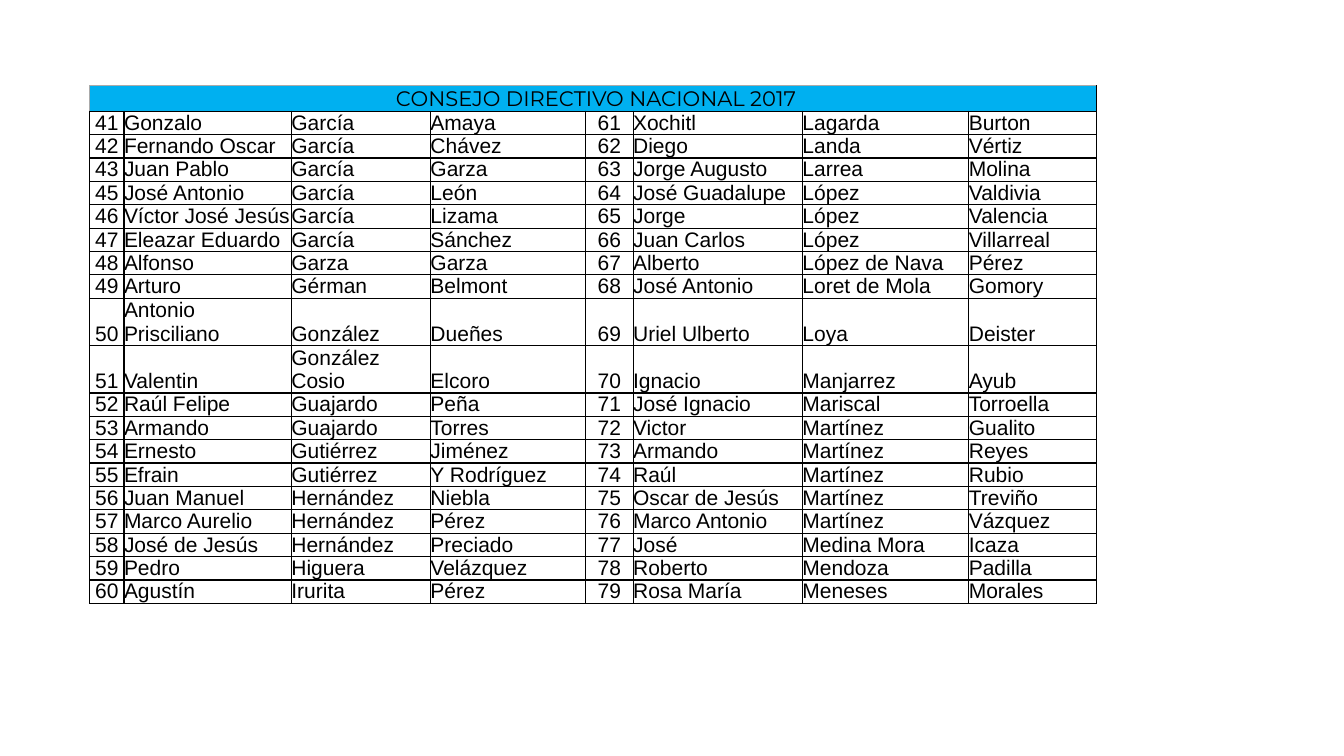
import pptx
import pptx.util
import pptx.dml.color
import pptx.enum.text
import lxml.etree

PX = 9144
COLORS = {"heading": "00B0F0", "cell": "FFFFFF", "text": "000000", "line": "000000", "edge": "AAAAAA"}
ALIGN = pptx.enum.text.PP_ALIGN
ANCHOR = pptx.enum.text.MSO_ANCHOR
DRAWING = "http://schemas.openxmlformats.org/drawingml/2006/main"

TITLE = " CONSEJO DIRECTIVO NACIONAL 2017"
COLUMN_WIDTHS = [34, 166, 138, 154, 47, 168, 165, 127]
NUMBER_COLUMNS = (0, 4)
LINE_HEIGHT = 23
TALL_HEIGHT = 47
TALL_ROWS = (9, 10)
MEMBERS = [
    ("41", "Gonzalo", "García", "Amaya", "61", "Xochitl", "Lagarda", "Burton"),
    ("42", "Fernando Oscar", "García", "Chávez", "62", "Diego", "Landa", "Vértiz"),
    ("43", "Juan Pablo", "García", "Garza", "63", "Jorge Augusto", "Larrea", "Molina"),
    ("45", "José Antonio", "García", "León", "64", "José Guadalupe", "López", "Valdivia"),
    ("46", "Víctor José Jesús", "García", "Lizama", "65", "Jorge", "López", "Valencia"),
    ("47", "Eleazar Eduardo", "García", "Sánchez", "66", "Juan Carlos", "López", "Villarreal"),
    ("48", "Alfonso", "Garza", "Garza", "67", "Alberto", "López de Nava", "Pérez"),
    ("49", "Arturo", "Gérman", "Belmont", "68", "José Antonio", "Loret de Mola", "Gomory"),
    ("50", "Antonio Prisciliano", "González", "Dueñes", "69", "Uriel Ulberto", "Loya", "Deister"),
    ("51", "Valentin", "González Cosio", "Elcoro", "70", "Ignacio", "Manjarrez", "Ayub"),
    ("52", "Raúl Felipe", "Guajardo", "Peña", "71", "José Ignacio", "Mariscal", "Torroella"),
    ("53", "Armando", "Guajardo", "Torres", "72", "Victor", "Martínez", "Gualito"),
    ("54", "Ernesto", "Gutiérrez", "Jiménez", "73", "Armando", "Martínez", "Reyes"),
    ("55", "Efrain", "Gutiérrez", "Y Rodríguez", "74", "Raúl", "Martínez", "Rubio"),
    ("56", "Juan Manuel", "Hernández", "Niebla", "75", "Oscar de Jesús", "Martínez", "Treviño"),
    ("57", "Marco Aurelio", "Hernández", "Pérez", "76", "Marco Antonio", "Martínez", "Vázquez"),
    ("58", "José de Jesús", "Hernández", "Preciado", "77", "José", "Medina Mora", "Icaza"),
    ("59", "Pedro", "Higuera", "Velázquez", "78", "Roberto", "Mendoza", "Padilla"),
    ("60", "Agustín", "Irurita", "Pérez", "79", "Rosa María", "Meneses", "Morales"),
]


class SlideBuilder:
    cell_format = {"margin_left": 0, "margin_top": 0, "margin_right": 0, "margin_bottom": 0}
    font_format = {"size": pptx.util.Pt(15), "bold": False}
    table_format = {"first_row": False, "horz_banding": False}

    def __init__(self, deck):
        self.page = deck.slides.add_slide(deck.slide_layouts[6])

    def apply(self, target, values):
        for name, value in values.items():
            setattr(target, name, value)

    def color(self, name):
        return pptx.dml.color.RGBColor.from_string(COLORS[name])

    def table(self, left, top, widths, heights):
        frame = self.page.shapes.add_table(
            len(heights), len(widths), left * PX, top * PX, sum(widths) * PX, sum(heights) * PX
        )
        table = frame.table
        self.apply(table, self.table_format)
        for column, width in zip(table.columns, widths):
            column.width = width * PX
        for row, height in zip(table.rows, heights):
            row.height = height * PX
        return table

    def borders(self, cell, edges):
        properties = cell._tc.get_or_add_tcPr()
        for side in "LRTB":
            line = lxml.etree.SubElement(properties, f"{{{DRAWING}}}ln{side}", w=str(pptx.util.Pt(1)))
            fill = lxml.etree.SubElement(line, f"{{{DRAWING}}}solidFill")
            lxml.etree.SubElement(fill, f"{{{DRAWING}}}srgbClr", val=COLORS[edges.get(side, "line")])

    def cell(self, cell, fill, anchor, edges):
        self.apply(cell, {**self.cell_format, "vertical_anchor": anchor})
        self.borders(cell, edges)
        cell.fill.solid()
        cell.fill.fore_color.rgb = self.color(fill)

    def text(self, cell, content, font, align):
        para = cell.text_frame.paragraphs[0]
        para.alignment = align
        span = para.add_run()
        span.text = content
        self.apply(span.font, {**self.font_format, "name": font})
        span.font.color.rgb = self.color("text")


def main():
    deck = pptx.Presentation()
    deck.slide_width = 1333 * PX
    deck.slide_height = 750 * PX
    builder = SlideBuilder(deck)

    heights = [TALL_HEIGHT if row in TALL_ROWS else LINE_HEIGHT for row in range(len(MEMBERS) + 1)]
    council = builder.table(89, 85, COLUMN_WIDTHS, heights)

    for column in range(len(COLUMN_WIDTHS)):
        edges = {"T": "edge", "L": "edge"} if column == 0 else {"T": "edge"}
        builder.cell(council.cell(0, column), "heading", ANCHOR.MIDDLE, edges)
    heading = council.cell(0, 0)
    heading.merge(council.cell(0, len(COLUMN_WIDTHS) - 1))
    builder.text(heading, TITLE, "Montserrat", ALIGN.CENTER)

    for row, member in enumerate(MEMBERS, 1):
        for column, content in enumerate(member):
            cell = council.cell(row, column)
            builder.cell(cell, "cell", ANCHOR.BOTTOM, {})
            align = ALIGN.CENTER if column in NUMBER_COLUMNS else ALIGN.LEFT
            builder.text(cell, content, "Arial", align)

    deck.save("out.pptx")


if __name__ == "__main__":
    main()
